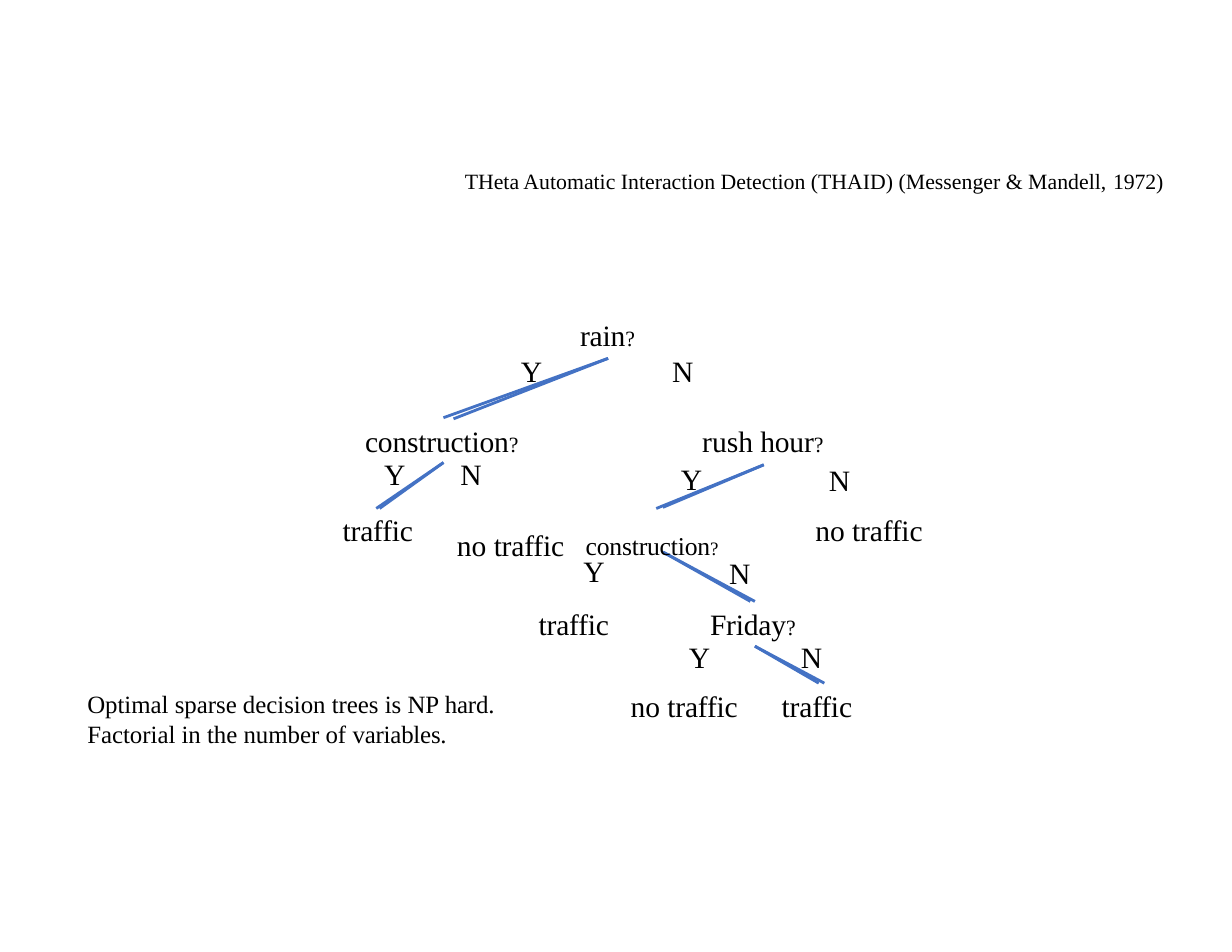
from dataclasses import dataclass

from lxml import etree
from pptx import Presentation
from pptx.dml.color import RGBColor
from pptx.enum.text import MSO_AUTO_SIZE
from pptx.oxml.ns import qn
from pptx.util import Emu, Pt

GROW = MSO_AUTO_SIZE.SHAPE_TO_FIT_TEXT
EMU_PER_PX = 9144
BLANK = 6


@dataclass(frozen=True)
class Theme:
    font: str = "Times New Roman"
    ink: RGBColor = RGBColor(0x00, 0x00, 0x00)
    branch: RGBColor = RGBColor(0x44, 0x72, 0xC4)
    branch_width: float = 1.8
    node: float = 19
    small: float = 14
    note: float = 16
    raised: float = 28.5
    raised_mark: float = 21
    tight: float = -0.1


@dataclass(frozen=True)
class Run:
    text: str
    size: float
    spacing: float = 0
    baseline: int = 0


@dataclass(frozen=True)
class Para:
    runs: list
    before: float = 1
    indent: int = 1
    tab: int = 0
    line: float = 0


def px(value):
    return Emu(value * EMU_PER_PX)


class SlideBuilder:
    def __init__(self, prs, theme):
        self.theme = theme
        self.slide = prs.slides.add_slide(prs.slide_layouts[BLANK])

    def text(self, x, y, w, h, *paras):
        sp = self.slide.shapes.add_textbox(px(x), px(y), px(w), px(h))
        tf = sp.text_frame
        tf.word_wrap = True
        tf.auto_size = GROW
        tf.margin_left = tf.margin_right = tf.margin_bottom = 0
        tf.margin_top = Pt(paras[0].before)
        for i, para in enumerate(paras):
            p = tf.add_paragraph() if i else tf.paragraphs[0]
            self.paragraph(p, para)

    def paragraph(self, p, para):
        p.space_before = Pt(para.before)
        if para.line:
            p.line_spacing = Pt(para.line)
        pPr = p._p.get_or_add_pPr()
        pPr.set("marL", str(px(para.indent)))
        if para.tab:
            tabs = etree.SubElement(pPr, qn("a:tabLst"))
            etree.SubElement(tabs, qn("a:tab"), pos=str(px(para.tab)), algn="l")
        for run in para.runs:
            self.run(p, run)

    def run(self, p, run):
        r = p.add_run()
        r.text = run.text
        r.font.name = self.theme.font
        r.font.size = Pt(run.size)
        r.font.color.rgb = self.theme.ink
        rPr = r._r.get_or_add_rPr()
        if run.spacing:
            rPr.set("spc", str(round(run.spacing * 100)))
        if run.baseline:
            rPr.set("baseline", str(run.baseline * 1000))

    def branch(self, apex, *ends):
        fb = self.slide.shapes.build_freeform(*apex, scale=EMU_PER_PX)
        for i, end in enumerate(ends):
            if i:
                fb.move_to(*apex)
            fb.add_line_segments([end], close=False)
        sp = fb.convert_to_shape()
        sp.shadow.inherit = False
        sp.fill.background()
        sp.line.color.rgb = self.theme.branch
        sp.line.width = Pt(self.theme.branch_width)


def main():
    theme = Theme()
    prs = Presentation()
    prs.slide_width, prs.slide_height = px(1100), px(850)
    s = SlideBuilder(prs, theme)

    def tight(text):
        return Run(text, theme.node, theme.tight)

    def plain(text):
        return Run(text, theme.node)

    mark = Run("?", theme.small, theme.tight)
    traffic = [tight("traffic")]
    no_traffic = [plain("no "), *traffic]

    s.text(414, 148, 643, 26, Para([
        Run("THeta Automatic Interaction Detection (THAID) (Messenger & Mandell, ", theme.small),
        Run("1972)", theme.small, theme.tight)]))

    branches = [
        ((543, 320), (396, 373), (405, 374)),
        ((682, 415), (592, 453), (586, 454)),
        ((396, 413), (339, 454), (336, 454)),
        ((674, 577), (731, 610), (736, 610)),
        ((592, 493), (674, 537), (670, 537)),
    ]
    for apex, *ends in branches:
        s.branch(apex, *ends)

    for answer, x, y in [("Y", 464, 314), ("N", 599, 314), ("N", 739, 411),
                         ("Y", 614, 569), ("N", 714, 569)]:
        s.text(x, y, 22, 34, Para([plain(answer)]))

    for x, y, w, runs in [(517, 282, 53, [tight("rain"), mark]),
                          (325, 376, 143, [tight("construction"), mark]),
                          (727, 456, 101, no_traffic),
                          (562, 613, 101, no_traffic),
                          (697, 613, 67, traffic)]:
        s.text(x, y, w, 34, Para(runs))

    s.text(607, 374, 131, 71,
           Para([plain("rush "), tight("hour"), mark], 2.6, 20),
           Para([plain("Y")], 1.7))
    s.text(305, 387, 144, 103,
           Para([Run("Y\tN", theme.node, -0.5)], 14.4, 38, 124),
           Para(traffic, 13.4))
    s.text(407, 456, 257, 34,
           Para([plain("no "), tight("traffic\t"),
                 Run("construction", theme.raised, theme.tight, 3),
                 Run("?", theme.raised_mark, theme.tight, 4)], tab=115))
    s.text(480, 477, 67, 97,
           Para([plain("Y")], 12.1, 41),
           Para(traffic, 11.1))
    s.text(633, 481, 81, 93,
           Para([plain("N")], 10.6, 18),
           Para([tight("Friday"), mark], 9.6))

    s.text(77, 613, 367, 56, Para([
        Run("Optimal sparse decision trees is NP ", theme.note),
        Run("hard. ", theme.note, theme.tight),
        Run("Factorial in the number of", theme.note),
        Run(" variables.", theme.note, theme.tight)], 1.8, line=19))

    prs.save("out.pptx")


if __name__ == "__main__":
    main()
